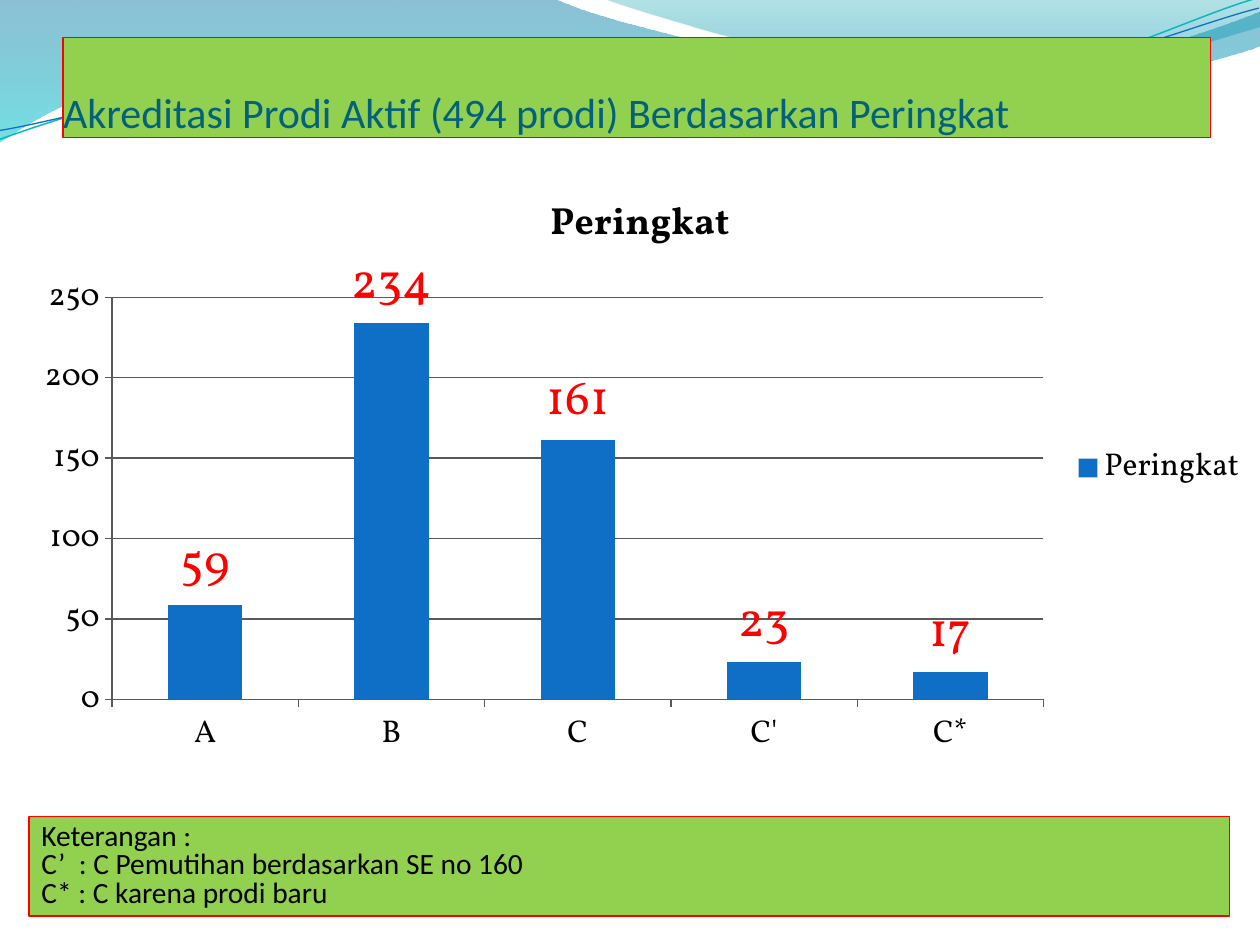
from lxml import etree
from pptx import Presentation
from pptx.chart.data import CategoryChartData
from pptx.dml.color import RGBColor
from pptx.enum.chart import XL_CHART_TYPE as ChartType, XL_LABEL_POSITION as LabelPos
from pptx.enum.chart import XL_LEGEND_POSITION as LegendPos, XL_TICK_MARK as Tick
from pptx.enum.shapes import MSO_SHAPE as Shape
from pptx.enum.text import MSO_ANCHOR as Anchor, MSO_AUTO_SIZE as AutoSize, PP_ALIGN as Align
from pptx.oxml.ns import qn
from pptx.util import Inches, Pt

COLORS = {"green": "92D050", "red": "FF0000", "teal": "04617B", "black": "000000",
          "blue": "0F6FC6", "aqua": "0AB8BF", "grid": "595959",
          "deep": "0074A1", "cyan": "00C6CF", "sea": "00A1A9", "sky": "008BBF"}
TITLE = "Akreditasi Prodi Aktif (494 prodi) Berdasarkan Peringkat"
SERIES = "Peringkat"
RANKS = {"A": 59, "B": 234, "C": 161, "C'": 23, "C*": 17}
NOTES = ["Keterangan :", "C’  : C Pemutihan berdasarkan SE no 160", "C* : C karena prodi baru"]
BANDS = [
    ([[(0, 0)], [(4.4, -0.01)], [(4.76, 0.17), (6.64, 0.63), (7.58, 0.63)],
      [(8.53, 0.63), (9.58, 0.26), (10, 0.09)], [(10.01, 0.36)],
      [(9.83, 0.44), (8.7, 0.76), (7.46, 0.75)], [(6.22, 0.75), (3.82, 0.28), (2.57, 0.34)],
      [(1.29, 0.36), (0.46, 0.83), (-0.01, 1.13)], [(0, 0)]],
     [(0, "deep", 45), (100, "cyan", 55)]),
    ([[(4.79, -0.01)], [(5.09, 0.11), (6.82, 0.62), (7.69, 0.65)],
      [(8.56, 0.69), (9.61, 0.32), (10, 0.21)], [(10, 0)], [(4.79, -0.01)]],
     [(0, "sea", 30), (80, "sky", 45)]),
]
STRAND_TURN = 357.3
STRANDS = [
    ([[(-0.02, 0.87)], [(0.47, 0.72), (1.58, 0.41), (2.77, 0.42)],
      [(3.96, 0.42), (5.91, 0.93), (7.12, 0.9)], [(8.32, 0.87), (9.4, 0.36), (10, 0.22)]],
     "aqua", 0.85),
    ([[(-0.02, 0.8)], [(0.46, 0.75), (1.64, 0.45), (2.83, 0.46)],
      [(4.03, 0.46), (5.96, 0.88), (7.16, 0.85)], [(8.35, 0.83), (9.42, 0.42), (10.01, 0.3)]],
     "blue", 0.75),
]


def rgb(name):
    """Return a named colour."""
    return RGBColor.from_string(COLORS[name])


def set_font(font, size, color, name):
    """Set size, colour and typeface."""
    font.size, font.name = Pt(size), name
    font.color.rgb = rgb(color)


def add_outline(shapes, steps, close):
    """Add a freeform whose three-point steps are cubic curves."""
    pts = [(Inches(x), Inches(y)) for step in steps for x, y in step]
    builder = shapes.build_freeform(*pts[0])
    builder.add_line_segments(pts[1:], close=close)
    sp = builder.convert_to_shape()
    sp.shadow.inherit = False
    lines = iter(list(sp._element.iter(qn("a:lnTo"))))
    for step in steps[1:]:
        first, *rest = [next(lines) for _ in step]
        if rest:
            first.tag = qn("a:cubicBezTo")
        for line in rest:
            first.append(line[0])
            line.getparent().remove(line)
    return sp


def fill_gradient(sp, stops):
    """Fill a shape from top to bottom with translucent stops."""
    sp.fill.gradient()
    grad = sp._element.spPr.find(qn("a:gradFill"))
    for child in list(grad):
        grad.remove(child)
    stop_list = etree.SubElement(grad, qn("a:gsLst"))
    for pos, color, alpha in stops:
        gs = etree.SubElement(stop_list, qn("a:gs"), pos=str(pos * 1000))
        clr = etree.SubElement(gs, qn("a:srgbClr"), val=COLORS[color])
        etree.SubElement(clr, qn("a:alpha"), val=str(alpha * 1000))
    etree.SubElement(grad, qn("a:lin"), ang="5400000", scaled="0")


def add_waves(s):
    """Draw the bands and strands behind the title."""
    for steps, stops in BANDS:
        sp = add_outline(s.shapes, steps, True)
        fill_gradient(sp, stops)
        sp.line.fill.background()
    group = s.shapes.add_group_shape()
    for steps, color, width in STRANDS:
        sp = add_outline(group.shapes, steps, False)
        sp.rotation = STRAND_TURN
        sp.fill.background()
        sp.line.color.rgb, sp.line.width = rgb(color), Pt(width)


def style_panel(sp, lines, size, color, anchor, spacing):
    """Give a panel its green fill, red edge and text."""
    sp.fill.solid()
    sp.fill.fore_color.rgb = rgb("green")
    sp.line.color.rgb, sp.line.width = rgb("red"), Pt(0.75)
    tf = sp.text_frame
    tf.word_wrap, tf.auto_size, tf.vertical_anchor = True, AutoSize.NONE, anchor
    for i, line in enumerate(lines):
        p = tf.add_paragraph() if i else tf.paragraphs[0]
        p.alignment, p.line_spacing = Align.LEFT, spacing
        r = p.add_run()
        r.text = line
        set_font(r.font, size, color, "Calibri")


def add_title(s):
    """Place the title panel above the waves."""
    sp = s.shapes.title
    s.shapes._spTree.append(sp._element)
    sp.left, sp.top, sp.width, sp.height = map(Inches, (0.5, 0.3, 9.11, 0.79))
    style_panel(sp, [TITLE], 24, "teal", Anchor.BOTTOM, 1.0)
    tf = sp.text_frame
    tf.margin_left = tf.margin_right = tf.margin_bottom = 0
    tf.margin_top = Inches(0.05)


def add_rank_chart(s):
    """Add the column chart of ranks."""
    data = CategoryChartData()
    data.categories = list(RANKS)
    data.add_series(SERIES, list(RANKS.values()))
    box = map(Inches, (0.16, 1.33, 9.84, 4.77))
    chart = s.shapes.add_chart(ChartType.COLUMN_CLUSTERED, *box, data).chart
    set_font(chart.font, 18, "black", "Vollkorn")
    chart.has_title = True
    r = chart.chart_title.text_frame.paragraphs[0].add_run()
    r.text = SERIES
    set_font(r.font, 21.6, "black", "Vollkorn")
    r.font.bold = True
    chart.has_legend = True
    chart.legend.position, chart.legend.include_in_layout = LegendPos.RIGHT, False
    for axis in (chart.category_axis, chart.value_axis):
        axis.major_tick_mark = Tick.OUTSIDE
        axis.format.line.color.rgb = rgb("grid")
    value_axis = chart.value_axis
    value_axis.minimum_scale, value_axis.maximum_scale, value_axis.major_unit = 0, 250, 50
    value_axis.major_gridlines.format.line.color.rgb = rgb("grid")
    plot = chart.plots[0]
    plot.gap_width, plot.vary_by_categories = 150, False
    fill = plot.series[0].format.fill
    fill.solid()
    fill.fore_color.rgb = rgb("blue")
    labels = plot.series[0].data_labels
    labels.show_value, labels.position = True, LabelPos.OUTSIDE_END
    set_font(labels.font, 28, "red", "Vollkorn")


def main():
    """Build the accreditation slide."""
    prs = Presentation()
    prs.slide_width, prs.slide_height = Inches(10), Inches(7.5)
    s = prs.slides.add_slide(prs.slide_layouts[5])
    add_waves(s)
    add_title(s)
    add_rank_chart(s)
    sp = s.shapes.add_shape(Shape.RECTANGLE, *map(Inches, (0.23, 6.48, 9.53, 0.79)))
    sp.shadow.inherit = False
    style_panel(sp, NOTES, 16.8, "black", Anchor.MIDDLE, 0.8)
    prs.save("out.pptx")


if __name__ == "__main__":
    main()
